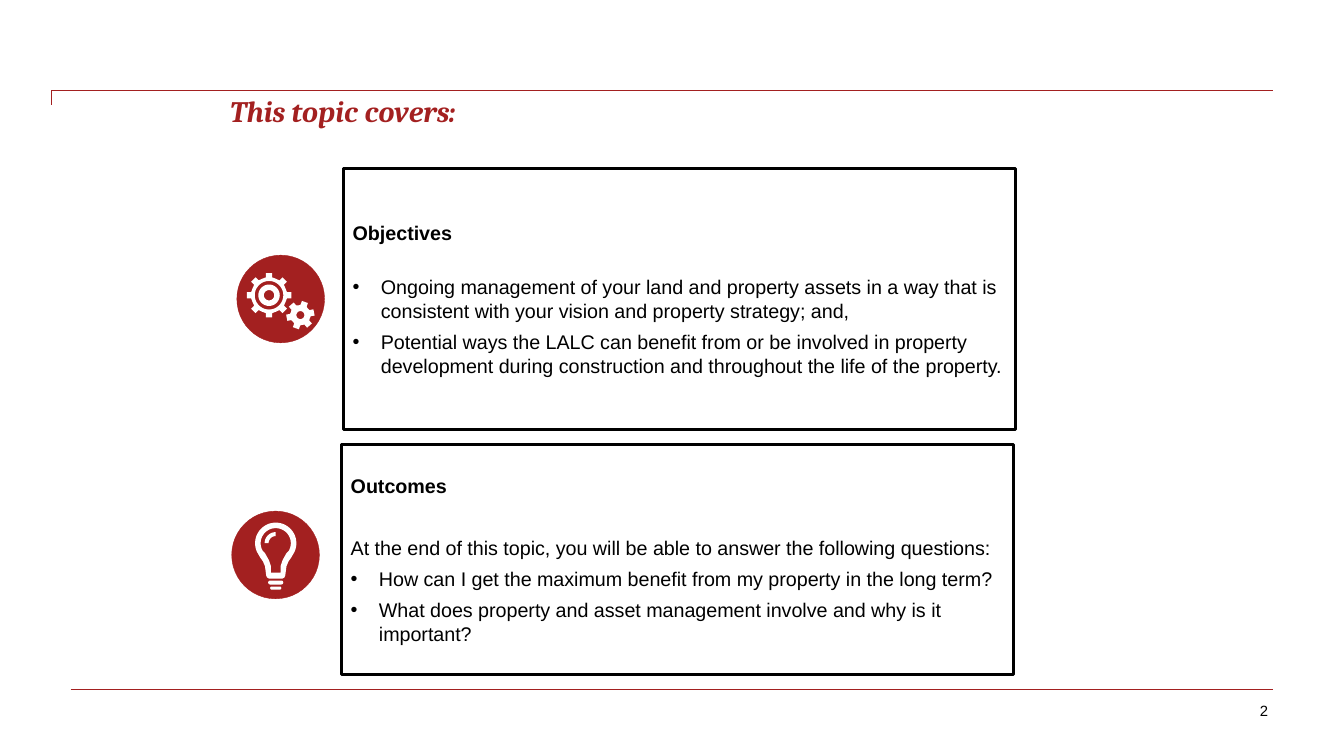
from math import cos, pi, radians, sin

from lxml import etree
from pptx import Presentation
from pptx.dml.color import RGBColor
from pptx.enum.shapes import MSO_CONNECTOR, MSO_SHAPE
from pptx.enum.text import MSO_ANCHOR, MSO_AUTO_SIZE, PP_ALIGN
from pptx.oxml.ns import qn
from pptx.util import Cm, Pt

STRAIGHT, ELBOW = MSO_CONNECTOR.STRAIGHT, MSO_CONNECTOR.ELBOW
OVAL, RECTANGLE = MSO_SHAPE.OVAL, MSO_SHAPE.RECTANGLE
TOP, MIDDLE = MSO_ANCHOR.TOP, MSO_ANCHOR.MIDDLE
LEFT, RIGHT = PP_ALIGN.LEFT, PP_ALIGN.RIGHT
NO_AUTOFIT = MSO_AUTO_SIZE.NONE

COLORS = {"red": "A32020", "black": "000000", "white": "FFFFFF"}
BODY_SIZE = 14.1
GAP = 5.3  # space before a paragraph, in points
EMPTY_LINE = 16.9  # extra space under a heading, in points


# Outlines as lists of (x, y) in centimetres
def arc(x, y, radius, start, end, steps=24):
    angles = [radians(start + (end - start) * i / steps) for i in range(steps + 1)]
    return [(x + radius * cos(a), y + radius * sin(a)) for a in angles]


def circle(x, y, radius):
    return arc(x, y, radius, 0, 360, 36)[:-1]


def gear(x, y, outer, root, teeth, turn, half_width):
    """Teeth of constant width, joined by root arcs."""
    points = []
    for tooth in range(teeth):
        angle = radians(turn) + 2 * pi * tooth / teeth
        for radius, side in ((root, -1), (outer, -1), (outer, 1), (root, 1)):
            across = side * half_width
            points.append((x + radius * cos(angle) - across * sin(angle),
                           y + radius * sin(angle) + across * cos(angle)))
        middle = angle + pi / teeth
        points.append((x + root * cos(middle), y + root * sin(middle)))
    return points


def mirrored(x, half):
    """Close a right half, given as offsets from the axis x."""
    return ([(x + dx, y) for dx, y in half]
            + [(x - dx, y) for dx, y in reversed(half)])


def bar(x, y, half_width, radius):
    return mirrored(x, arc(half_width - radius, y, radius, -90, 90, 8))


class SlideBuilder:
    def __init__(self, presentation):
        self.slide = presentation.slides.add_slide(presentation.slide_layouts[5])
        self.shapes = self.slide.shapes

    def color(self, name):
        return RGBColor.from_string(COLORS[name])

    def paint(self, shape, fill, line=None, width=0.25):
        shape.shadow.inherit = False
        shape.fill.solid()
        shape.fill.fore_color.rgb = self.color(fill)
        if line:
            shape.line.color.rgb = self.color(line)
            shape.line.width = Pt(width)
        else:
            shape.line.fill.background()

    def frame(self, shape, anchor, side=0.23, top=0.1):
        frame = shape.text_frame
        frame.word_wrap = True
        frame.auto_size = NO_AUTOFIT
        frame.vertical_anchor = anchor
        frame.margin_left = frame.margin_right = Cm(side)
        frame.margin_top = frame.margin_bottom = Cm(top)
        return frame

    def run(self, paragraph, text, size=BODY_SIZE, font="Arial", color="black",
            bold=False, italic=False):
        run = paragraph.add_run()
        run.text = text
        run.font.size, run.font.name = Pt(size), font
        run.font.bold, run.font.italic = bold, italic
        run.font.color.rgb = self.color(color)

    def bullet(self, paragraph):
        properties = paragraph._p.get_or_add_pPr()
        properties.set("marL", str(Cm(0.71)))
        properties.set("indent", str(-Cm(0.71)))
        etree.SubElement(properties, qn("a:buFont"), typeface="Arial")
        etree.SubElement(properties, qn("a:buChar"), char="•")

    def title(self, text, left, top, width, height):
        shape = self.shapes.title
        shape.left, shape.top = Cm(left), Cm(top)
        shape.width, shape.height = Cm(width), Cm(height)
        paragraph = self.frame(shape, TOP, 0, 0).paragraphs[0]
        paragraph.alignment = LEFT
        self.run(paragraph, text, 21.2, "Cambria", "red", True, True)

    def rule(self, kind, x1, y1, x2, y2):
        line = self.shapes.add_connector(kind, Cm(x1), Cm(y1), Cm(x2), Cm(y2))
        line.line.color.rgb = self.color("red")
        line.line.width = Pt(0.75)
        properties = line._element.spPr
        etree.SubElement(properties, qn("a:effectLst"))
        if kind == ELBOW:  # bend at the very start
            guides = properties.find(qn("a:prstGeom")).find(qn("a:avLst"))
            etree.SubElement(guides, qn("a:gd"), name="adj1", fmla="val 0")

    def icon(self, left, top, outlines):
        """White outlines on a red disc; inner outlines cut holes."""
        group = self.shapes.add_group_shape()
        disc = group.shapes.add_shape(OVAL, Cm(left), Cm(top), Cm(2.21), Cm(2.21))
        self.paint(disc, "red", "red")
        contours = [[(Cm(x), Cm(y)) for x, y in points] for points in outlines]
        builder = group.shapes.build_freeform(*contours[0][0], scale=1.0)
        for index, points in enumerate(contours):
            if index:
                builder.move_to(*points[0])
            builder.add_line_segments(points[1:], close=True)
        self.paint(builder.convert_to_shape(), "white")

    def panel(self, left, top, height, entries):
        """Entries are (text, style, space before)."""
        shape = self.shapes.add_shape(RECTANGLE, Cm(left), Cm(top), Cm(16.94), Cm(height))
        self.paint(shape, "white", "black", 2)
        frame = self.frame(shape, MIDDLE)
        for index, (text, style, space) in enumerate(entries):
            paragraph = frame.add_paragraph() if index else frame.paragraphs[0]
            paragraph.alignment = LEFT
            paragraph.space_before = Pt(space)
            if style == "bullet":
                self.bullet(paragraph)
            self.run(paragraph, text, bold=style == "heading")

    def page_number(self, text, left, top, width, height):
        box = self.shapes.add_textbox(Cm(left), Cm(top), Cm(width), Cm(height))
        paragraph = self.frame(box, MIDDLE, 0.25, 0.13).paragraphs[0]
        paragraph.alignment = RIGHT
        self.run(paragraph, text, 10.6)


def main():
    presentation = Presentation()
    presentation.slide_width, presentation.slide_height = Cm(33.87), Cm(19.05)
    builder = SlideBuilder(presentation)

    # Rules and title
    builder.rule(ELBOW, 1.3, 2.64, 32.08, 2.29)
    builder.rule(STRAIGHT, 1.78, 17.37, 32.08, 17.37)
    builder.title("This topic covers:", 5.79, 2.34, 21.77, 2.46)

    # Light bulb: glass, hollow, glint and two base bars
    axis, center = 6.95, 13.69
    glass = arc(0, center, 0.52, -90, 25) + [
        (0.39, 14.05), (0.32, 14.15), (0.27, 14.27), (0.24, 14.5), (0.22, 14.55), (0.17, 14.58)]
    hollow = arc(0, center, 0.38, -90, 30) + [
        (0.27, 13.94), (0.17, 14.12), (0.12, 14.27), (0.12, 14.43)]
    glint = arc(axis, center, 0.28, 180, 270) + arc(axis, center, 0.18, 270, 180)
    builder.icon(5.84, 12.88, [mirrored(axis, glass), mirrored(axis, hollow), glint,
                               bar(axis, 14.68, 0.19, 0.05), bar(axis, 14.82, 0.14, 0.04)])

    # Text panels
    builder.panel(8.61, 11.2, 5.79, [
        ("Outcomes", "heading", GAP),
        ("At the end of this topic, you will be able to answer the following questions:",
         "plain", 2 * GAP + EMPTY_LINE),
        ("How can I get the maximum benefit from my property in the long term?", "bullet", GAP),
        ("What does property and asset management involve and why is it important?",
         "bullet", GAP)])
    builder.panel(8.66, 4.24, 6.58, [
        ("Objectives", "heading", 0),
        ("Ongoing management of your land and property assets in a way that is consistent "
         "with your vision and property strategy; and,", "bullet", GAP + EMPTY_LINE),
        ("Potential ways the LALC can benefit from or be involved in property development "
         "during construction and throughout the life of the property.", "bullet", GAP)])

    # Gears: a large one with a ring and a small one
    large, small = (6.78, 7.44), (7.57, 7.94)
    rings = [circle(*large, radius) for radius in (0.36, 0.27, 0.13)]
    builder.icon(5.97, 6.43, [gear(*large, 0.56, 0.45, 8, 0, 0.08), *rings,
                              gear(*small, 0.35, 0.25, 6, -11, 0.08), circle(*small, 0.1)])

    builder.page_number("2", 22.96, 17.45, 9.25, 0.89)
    presentation.save("out.pptx")


if __name__ == "__main__":
    main()
